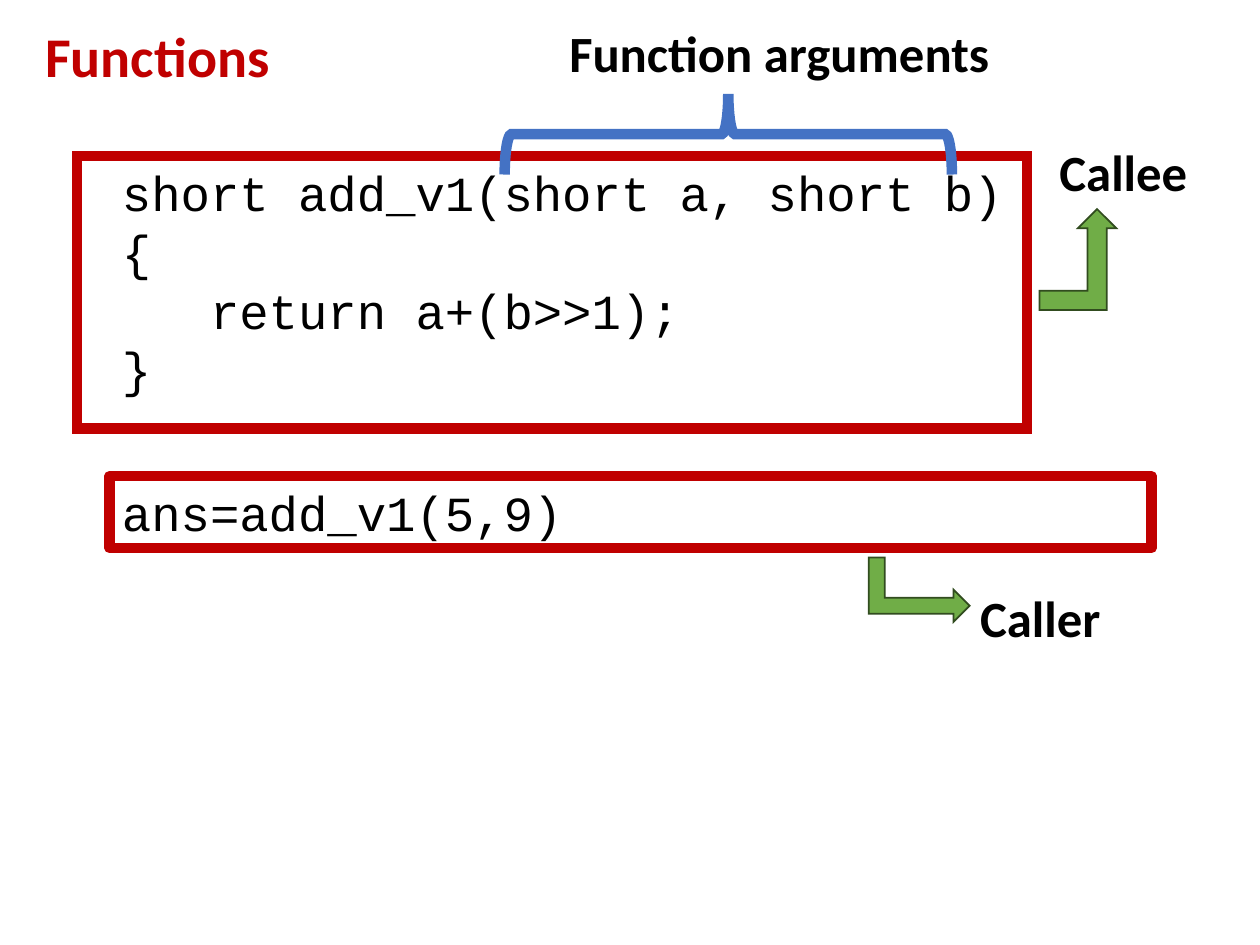
"""Build the slide explaining the callee, caller and arguments of a function."""
from typing import NamedTuple

import pptx
import pptx.dml.color
import pptx.enum.shapes
import pptx.enum.text
import pptx.oxml.ns
import pptx.util
from lxml import etree

WIDTH, HEIGHT = 10, 7.5
RED, BLACK, WHITE = "C00000", "000000", "FFFFFF"
GREEN, DARK_GREEN, BLUE = "70AD47", "314C1F", "4472C4"
SHAPE = pptx.enum.shapes.MSO_SHAPE


class Box(NamedTuple):
    """Left, top, width and height as shares of the slide's size."""
    left: float
    top: float
    width: float
    height: float


class Label(NamedTuple):
    """A heading or a name beside the code."""
    text: str
    box: Box
    size: int = 29
    color: str = BLACK


class Mark(NamedTuple):
    """A preset shape with its look."""
    kind: SHAPE
    box: Box
    line: str
    weight: float
    fill: str | None = None
    rotation: int = 0


def share(left: float, top: float, width: float, height: float) -> Box:
    """Turn inches into shares of the slide."""
    return Box(left / WIDTH, top / HEIGHT, width / WIDTH, height / HEIGHT)


def rgb(color: str) -> pptx.dml.color.RGBColor:
    """Return the colour of a hex string."""
    return pptx.dml.color.RGBColor.from_string(color)


def place(box: Box) -> list[int]:
    """Return the box in slide lengths."""
    sizes = (WIDTH, HEIGHT, WIDTH, HEIGHT)
    return [pptx.util.Inches(part * size) for part, size in zip(box, sizes)]


def outline(sp, color: str, weight: float, join: str) -> None:
    """Set the line of a shape and the way its corners join."""
    sp.line.color.rgb = rgb(color)
    sp.line.width = pptx.util.Pt(weight)
    ln = sp.line._get_or_add_ln()
    etree.SubElement(ln, pptx.oxml.ns.qn(f"a:{join}"))


def draw_mark(s, mark: Mark) -> None:
    """Draw a frame, an arrow or a brace."""
    sp = s.shapes.add_shape(mark.kind, *place(mark.box))
    sp.shadow.inherit = False
    sp.rotation = mark.rotation
    if mark.fill:
        sp.fill.solid()
        sp.fill.fore_color.rgb = rgb(mark.fill)
    else:
        sp.fill.background()
    outline(sp, mark.line, mark.weight, "miter")


def draw_text(s, box: Box, lines: list[str], font: str, size: int,
              color: str = BLACK, bold: bool = False, wrap: bool = True):
    """Draw a text box with one paragraph for each line."""
    sp = s.shapes.add_textbox(*place(box))
    tf = sp.text_frame
    tf.word_wrap = wrap
    tf.auto_size = pptx.enum.text.MSO_AUTO_SIZE.SHAPE_TO_FIT_TEXT
    for i, line in enumerate(lines):
        p = tf.paragraphs[0] if i == 0 else tf.add_paragraph()
        r = p.add_run()
        r.text = line
        r.font.name = font
        r.font.size = pptx.util.Pt(size)
        r.font.bold = bold
        r.font.color.rgb = rgb(color)
    return sp


FRAME = Mark(SHAPE.RECTANGLE, share(0.61, 1.24, 7.54, 2.16), RED, 6, WHITE)
MARKS = [
    Mark(SHAPE.BENT_UP_ARROW, share(8.25, 1.66, 0.61, 0.8), DARK_GREEN, 1, GREEN),
    Mark(SHAPE.BENT_UP_ARROW, share(7.04, 4.28, 0.51, 0.8), DARK_GREEN, 1, GREEN, 90),
    Mark(SHAPE.RIGHT_BRACE, share(5.46, -0.71, 0.64, 3.55), BLUE, 6, rotation=270),
]
LABELS = [
    Label("Functions", share(0.26, 0.12, 2, 0.64), 32, RED),
    Label("Callee", share(8.31, 1.07, 1.23, 0.59)),
    Label("Caller", share(7.68, 4.61, 1.17, 0.59)),
    Label("Function arguments", share(4.42, 0.12, 3.56, 0.59)),
]
CALLEE = ["short add_v1(short a, short b)", "{", "   return a+(b>>1);", "}"]
CALLER = ["ans=add_v1(5,9)"]


def main() -> None:
    """Build and save the slide."""
    prs = pptx.Presentation()
    prs.slide_width = pptx.util.Inches(WIDTH)
    prs.slide_height = pptx.util.Inches(HEIGHT)
    s = prs.slides.add_slide(prs.slide_layouts[6])
    draw_mark(s, FRAME)
    draw_text(s, share(0.87, 1.24, 8.27, 1.99), CALLEE, "Courier New", 28)
    call = draw_text(s, share(0.87, 3.78, 8.27, 0.57), CALLER, "Courier New", 28)
    outline(call, RED, 6, "round")
    for label in LABELS:
        draw_text(s, label.box, [label.text], "Calibri", label.size,
                  label.color, bold=True, wrap=False)
    for mark in MARKS:
        draw_mark(s, mark)
    prs.save("out.pptx")


if __name__ == "__main__":
    main()
